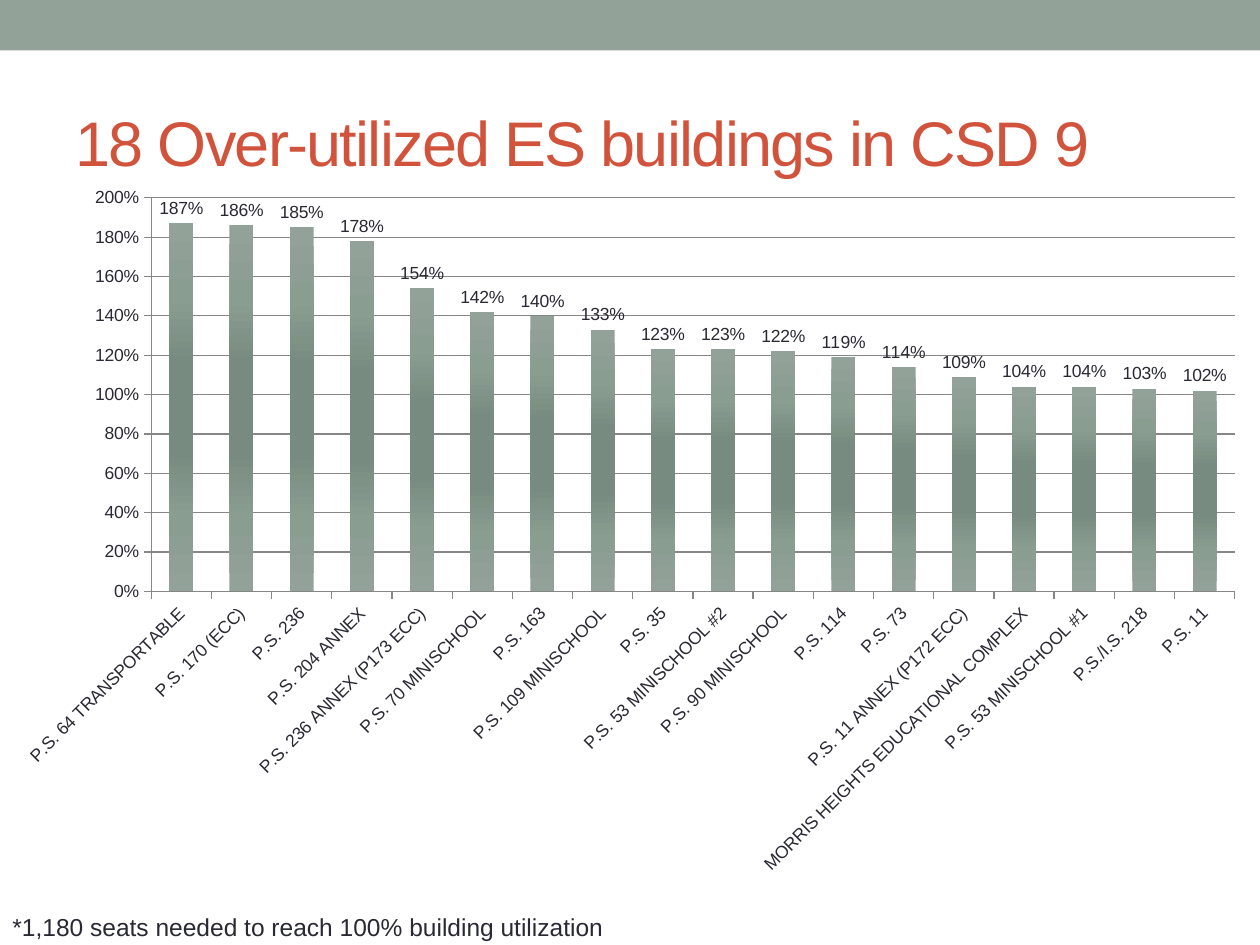
from pptx import Presentation
from pptx.chart.data import CategoryChartData as Data
from pptx.dml.color import RGBColor
from pptx.enum.chart import XL_CHART_TYPE as Kind, XL_LABEL_POSITION as Spot, XL_TICK_MARK as Tick
from pptx.enum.shapes import MSO_SHAPE as Shape
from pptx.enum.text import MSO_ANCHOR as Anchor, PP_ALIGN as Align
from pptx.oxml import parse_xml
from pptx.oxml.ns import nsdecls, qn
from pptx.util import Pt


def tint(code):
    return RGBColor.from_string(code)


def style(font, size, code):
    for key, val in {"name": "Arial", "size": Pt(size), "bold": False}.items():
        setattr(font, key, val)
    font.color.rgb = tint(code)


deck = Presentation()
deck.slide_width, deck.slide_height = Pt(720), Pt(540)
slide = deck.slides.add_slide(deck.slide_layouts[5])

band = slide.shapes.add_shape(Shape.RECTANGLE, 0, 0, Pt(720), Pt(28.8))
band.shadow.inherit = False
band.fill.solid()
band.fill.fore_color.rgb = tint("93A299")
band.line.fill.background()

title = slide.shapes.title
place = {"left": 36, "top": 41.76, "width": 648, "height": 77.76}
for key, val in place.items():
    setattr(title, key, Pt(val))
title.text_frame.vertical_anchor = Anchor.MIDDLE
para = title.text_frame.paragraphs[0]
para.alignment = Align.LEFT
run = para.add_run()
run.text = "18 Over-utilized ES buildings in CSD 9"
style(run.font, 36, "D2533C")
run.font._element.set("spc", "-100")

rates = {
    "P.S. 64 TRANSPORTABLE": 1.87,
    "P.S. 170 (ECC)": 1.86,
    "P.S. 236": 1.85,
    "P.S. 204 ANNEX": 1.78,
    "P.S. 236 ANNEX (P173 ECC)": 1.54,
    "P.S. 70 MINISCHOOL": 1.42,
    "P.S. 163": 1.4,
    "P.S. 109 MINISCHOOL": 1.33,
    "P.S. 35": 1.23,
    "P.S. 53 MINISCHOOL #2": 1.23,
    "P.S. 90 MINISCHOOL": 1.22,
    "P.S. 114": 1.19,
    "P.S. 73": 1.14,
    "P.S. 11 ANNEX (P172 ECC)": 1.09,
    "MORRIS HEIGHTS EDUCATIONAL COMPLEX": 1.04,
    "P.S. 53 MINISCHOOL #1": 1.04,
    "P.S./I.S. 218": 1.03,
    "P.S. 11": 1.02,
}
data = Data(number_format="0%")
data.categories = list(rates)
data.add_series("Series 1", list(rates.values()))
frame = slide.shapes.add_chart(
    Kind.COLUMN_CLUSTERED, 0, Pt(100.8), Pt(720), Pt(408.96), data)
chart = frame.chart
chart.has_legend = chart.has_title = False
style(chart.font, 10, "292934")

area = chart._chartSpace.find(".//" + qn("c:plotArea"))
for old in area.findall(qn("c:layout")):
    area.remove(old)
box = {"x": 0.12, "y": 0.03, "w": 0.86, "h": 0.55}
spots = "".join(f'<c:{key} val="{val}"/>' for key, val in box.items())
area.insert(0, parse_xml(
    f'<c:layout {nsdecls("c")}><c:manualLayout><c:layoutTarget val="inner"/>'
    f'<c:xMode val="edge"/><c:yMode val="edge"/>{spots}</c:manualLayout></c:layout>'))

cat, rate = chart.category_axis, chart.value_axis
for axis in (cat, rate):
    axis.major_tick_mark, axis.minor_tick_mark = Tick.OUTSIDE, Tick.NONE
    style(axis.tick_labels.font, 10, "292934")
cat.tick_labels.font._element.getparent().getparent().getparent().find(
    qn("a:bodyPr")).set("rot", "-2700000")
for key, val in {"minimum_scale": 0, "maximum_scale": 2, "major_unit": 0.2,
                 "has_major_gridlines": True}.items():
    setattr(rate, key, val)
rate.tick_labels.number_format = "0%"
rate.tick_labels.number_format_is_linked = False
for line in (cat.format.line, rate.format.line, rate.major_gridlines.format.line):
    line.color.rgb = tint("868686")
    line.width = Pt(0.75)

plot = chart.plots[0]
plot.gap_width = 150
plot.vary_by_categories = False
plot.has_data_labels = True
for key, val in {"show_value": True, "number_format": "0%",
                 "number_format_is_linked": False,
                 "position": Spot.OUTSIDE_END}.items():
    setattr(plot.data_labels, key, val)
style(plot.data_labels.font, 10, "292934")

bars = plot.series[0].format
bars.line.fill.background()
bars.fill.gradient()
bars.fill.gradient_angle = 90
stops = bars.fill.gradient_stops[0]._gs.getparent()
for old in list(stops):
    stops.remove(old)
for pos, code in ((0, "93A299"), (20, "8A9D91"), (38, "778B80"),
                  (62, "778B80"), (80, "8A9D91"), (100, "93A299")):
    stops.append(parse_xml(
        f'<a:gs {nsdecls("a")} pos="{pos * 1000}"><a:srgbClr val="{code}"/></a:gs>'))

note = slide.shapes.add_textbox(0, Pt(517.68), Pt(720), Pt(24.48))
note.text_frame.word_wrap = True
run = note.text_frame.paragraphs[0].add_run()
run.text = "*1,180 seats needed to reach 100% building utilization"
style(run.font, 14, "292934")

deck.save("out.pptx")
